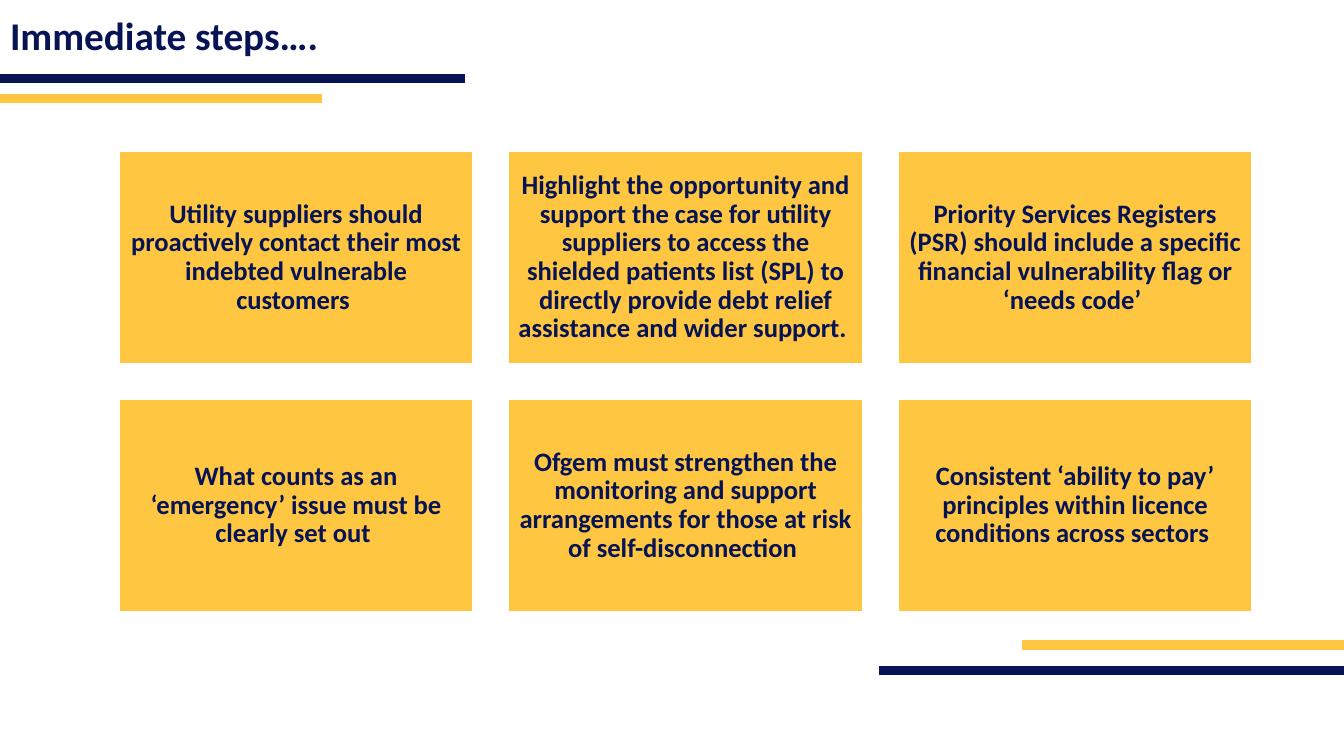
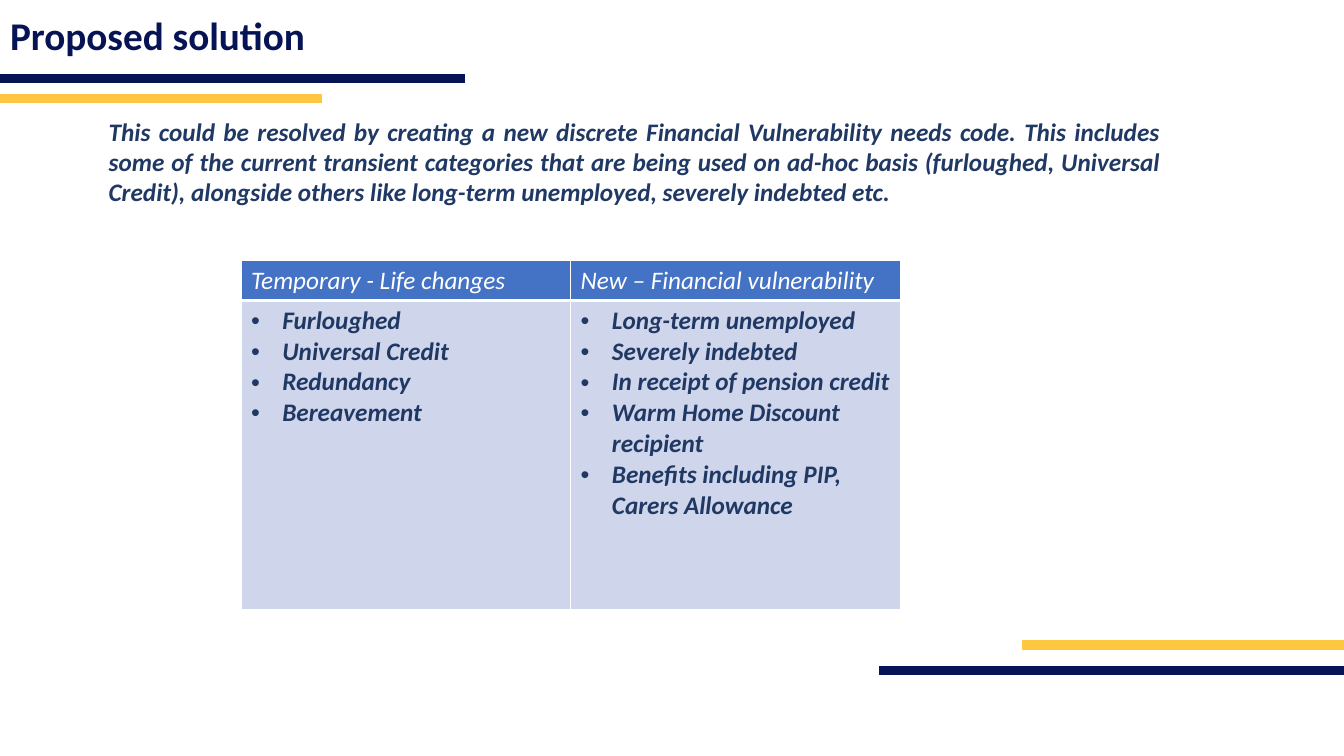
from dataclasses import dataclass

from lxml import etree
from pptx import Presentation
from pptx.dml.color import RGBColor
from pptx.enum.shapes import MSO_SHAPE
from pptx.enum.text import MSO_ANCHOR, MSO_AUTO_SIZE, PP_ALIGN
from pptx.oxml.ns import qn
from pptx.util import Pt

RECTANGLE = MSO_SHAPE.RECTANGLE
MIDDLE = MSO_ANCHOR.MIDDLE
NO_FIT = MSO_AUTO_SIZE.NONE
LEFT, CENTER, JUSTIFY = PP_ALIGN.LEFT, PP_ALIGN.CENTER, PP_ALIGN.JUSTIFY
EMU_PER_PX = 9144  # 100 px to the inch
TITLE_ONLY = 5


@dataclass(frozen=True)
class Theme:
    font: str = "Calibri"
    navy: str = "061354"
    gold: str = "FFC641"
    white: str = "FFFFFF"
    ink: str = "203864"
    header: str = "4472C4"
    cell: str = "CFD5EA"
    title_size: int = 28
    card_size: int = 19
    body_size: int = 18
    tight: float = 0.9


THEME = Theme()

# Left, top, width, height in px
PAGE_WIDTH, PAGE_HEIGHT = 1333, 750
TITLE_BOX = (0, 5, 1150, 66)
BANDS = [
    ((0, 74, 461, 8), THEME.navy),
    ((0, 94, 319, 8), THEME.gold),
    ((872, 661, 461, 8), THEME.navy),
    ((1014, 636, 319, 8), THEME.gold),
]

STEPS = [
    "Utility suppliers should proactively contact their most indebted vulnerable customers ",
    "Highlight the opportunity and support the case for utility suppliers to access the "
    "shielded patients list (SPL) to directly provide debt relief assistance and wider support. ",
    "Priority Services Registers (PSR) should include a specific financial vulnerability "
    "flag or ‘needs code’ ",
    "What counts as an ‘emergency’ issue must be clearly set out ",
    "Ofgem must strengthen the monitoring and support arrangements for those at risk of "
    "self-disconnection ",
    "Consistent ‘ability to pay’ principles within licence conditions across sectors ",
]
PROPOSAL = (
    "This could be resolved by creating a new discrete Financial Vulnerability needs code. "
    "This includes some of the current transient categories that are being used on ad-hoc "
    "basis (furloughed, Universal Credit), alongside others like long-term unemployed, "
    "severely indebted etc."
)
NEEDS_CODES = {
    "Temporary - Life changes": [
        "Furloughed", "Universal Credit", "Redundancy", "Bereavement",
    ],
    "New – Financial vulnerability": [
        "Long-term unemployed", "Severely indebted", "In receipt of pension credit",
        "Warm Home Discount recipient", "Benefits including PIP, Carers Allowance",
    ],
}


def px(length):
    return round(length * EMU_PER_PX)


def place(box):
    return [px(length) for length in box]


def color(value):
    return RGBColor.from_string(value)


def add_span(para, text, size, ink, bold=True, italic=False):
    span = para.add_run()
    span.text = text
    font = span.font
    font.name, font.size, font.bold, font.italic = THEME.font, Pt(size), bold, italic
    font.color.rgb = color(ink)


def add_rectangle(page, box, fill, line):
    shape = page.shapes.add_shape(RECTANGLE, *place(box))
    shape.shadow.inherit = False
    shape.fill.solid()
    shape.fill.fore_color.rgb = color(fill)
    shape.line.color.rgb = color(line)
    shape.line.width = Pt(1)
    return shape


# Shared parts: bands live on the layout, each page fills in its title
def move_bands_to_layout(page, layout):
    for number, (box, fill) in enumerate(BANDS, start=101):
        element = add_rectangle(page, box, fill, fill).element
        element.nvSpPr.cNvPr.set("id", str(number))
        layout.shapes.element.append(element)


def add_page(deck, title):
    page = deck.slides.add_slide(deck.slide_layouts[TITLE_ONLY])
    holder = page.shapes.title
    holder.left, holder.top, holder.width, holder.height = place(TITLE_BOX)
    frame = holder.text_frame
    frame.auto_size, frame.vertical_anchor = NO_FIT, MIDDLE
    para = frame.paragraphs[0]
    para.alignment, para.line_spacing = LEFT, THEME.tight
    add_span(para, title, THEME.title_size, THEME.navy)
    return page


# Card grid
def add_card(page, box, text):
    frame = add_rectangle(page, box, THEME.gold, THEME.white).text_frame
    frame.word_wrap, frame.vertical_anchor = True, MIDDLE
    frame.margin_left = frame.margin_right = px(8)
    frame.margin_top = frame.margin_bottom = px(8)
    para = frame.paragraphs[0]
    para.alignment, para.line_spacing = CENTER, THEME.tight
    add_span(para, text, THEME.card_size, THEME.navy)


def add_card_grid(page, box, texts, columns=3, gap=35):
    left, top, width, height = box
    rows = -(-len(texts) // columns)
    card_width = (width - gap * (columns - 1)) / columns
    card_height = (height - gap * (rows - 1)) / rows
    for index, text in enumerate(texts):
        row, column = divmod(index, columns)
        card = (left + column * (card_width + gap), top + row * (card_height + gap),
                card_width, card_height)
        add_card(page, card, text)


# Introductory paragraph
def add_intro(page, box, text):
    frame = page.shapes.add_textbox(*place(box)).text_frame
    frame.word_wrap = True
    para = frame.paragraphs[0]
    para.alignment = JUSTIFY
    add_span(para, text, THEME.body_size, THEME.ink, italic=True)


# Table
def style_cell(cell, fill, top=1, bottom=1):
    properties = cell._tc.get_or_add_tcPr()
    for side, width in (("L", 1), ("R", 1), ("T", top), ("B", bottom)):
        line = etree.SubElement(properties, qn(f"a:ln{side}"), w=str(Pt(width)))
        paint = etree.SubElement(line, qn("a:solidFill"))
        etree.SubElement(paint, qn("a:srgbClr"), val=THEME.white)
    cell.fill.solid()
    cell.fill.fore_color.rgb = color(fill)


def add_bullet(para, indent=31):
    properties = para._p.get_or_add_pPr()
    properties.set("marL", str(px(indent)))
    properties.set("indent", str(-px(indent)))
    etree.SubElement(properties, qn("a:buFont"), typeface="Arial")
    etree.SubElement(properties, qn("a:buChar"), char="•")


def add_needs_table(page, box, columns, header_height=40):
    left, top, width, height = box
    table = page.shapes.add_table(2, len(columns), *place(box)).table
    table.rows[0].height = px(header_height)
    table.rows[1].height = px(height - header_height)
    for index, (heading, items) in enumerate(columns.items()):
        table.columns[index].width = px(width / len(columns))
        head, body = table.cell(0, index), table.cell(1, index)
        style_cell(head, THEME.header, bottom=3)
        style_cell(body, THEME.cell, top=3)
        add_span(head.text_frame.paragraphs[0], heading, THEME.body_size, THEME.white,
                 bold=False, italic=True)
        frame = body.text_frame
        for number, item in enumerate(items):
            para = frame.add_paragraph() if number else frame.paragraphs[0]
            add_bullet(para)
            add_span(para, item, THEME.body_size, THEME.ink, italic=True)


def main():
    deck = Presentation()
    deck.slide_width, deck.slide_height = px(PAGE_WIDTH), px(PAGE_HEIGHT)

    steps = add_page(deck, "Immediate steps….")
    move_bands_to_layout(steps, deck.slide_layouts[TITLE_ONLY])
    add_card_grid(steps, (118, 150, 1124, 457), STEPS)

    solution = add_page(deck, "Proposed solution")
    add_intro(solution, (98, 110, 1063, 101), PROPOSAL)
    add_needs_table(solution, (239, 258, 654, 347), NEEDS_CODES)

    deck.save("out.pptx")


if __name__ == "__main__":
    main()
